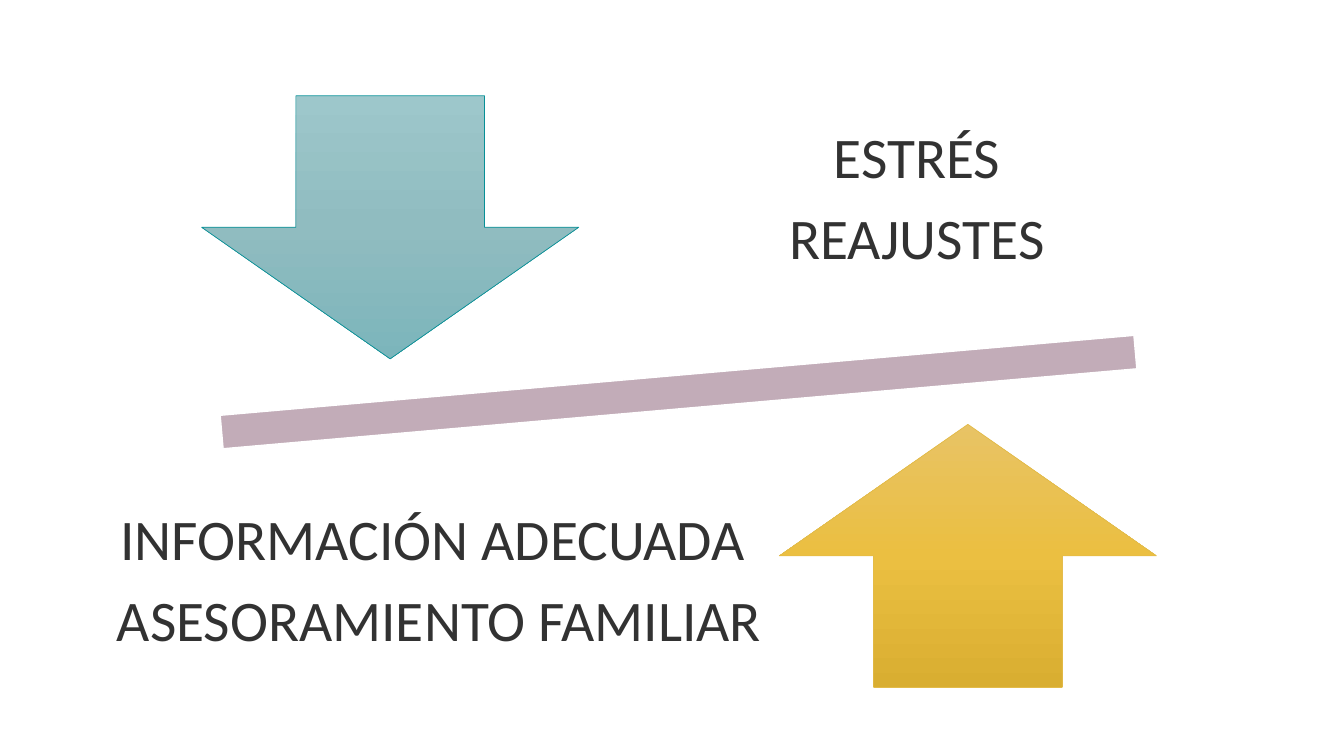
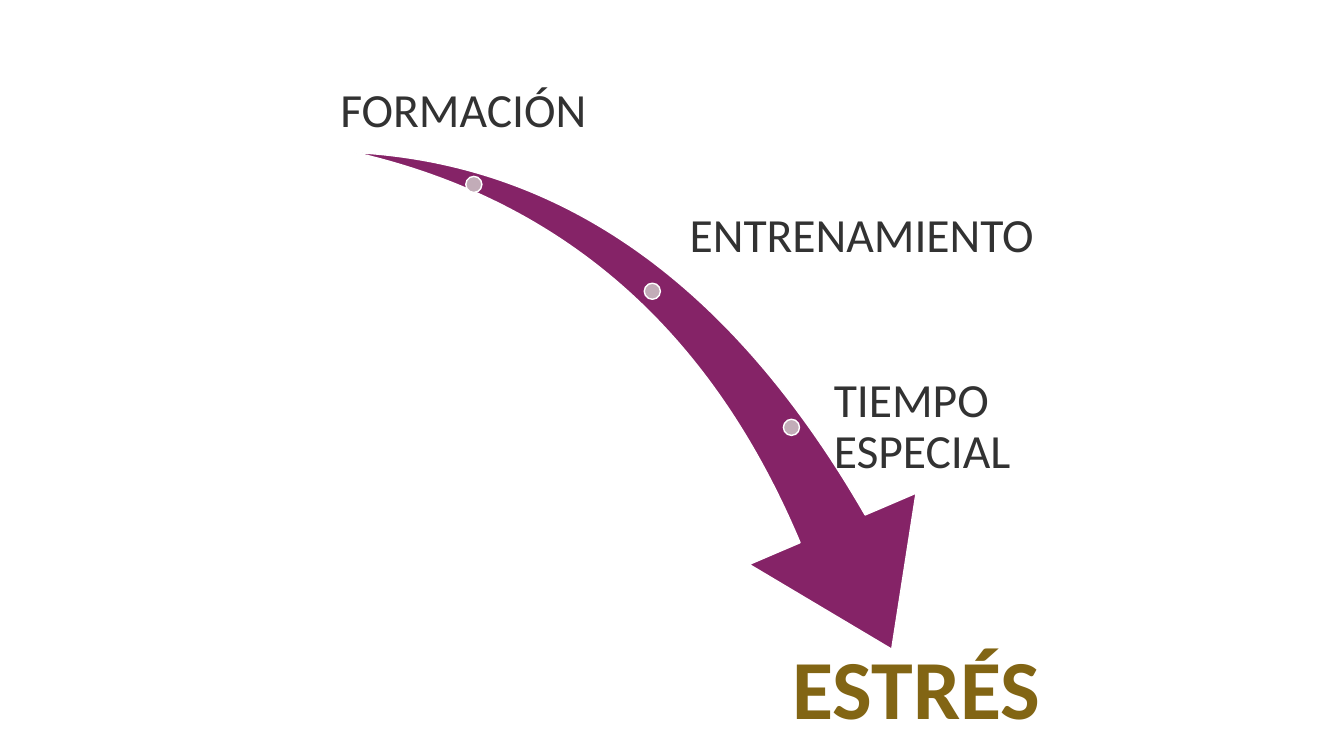
from copy import deepcopy
from pptx import Presentation, util as u
from pptx.dml.color import RGBColor
from pptx.enum import shapes, text

COLORS = {
    "ink": "323232", "white": "FFFFFF", "mauve": "C2ACB8", "plum": "852367",
    "olive": "826514", "teal_edge": "079097", "gold_edge": "E3BB49",
}
TEAL_FADE = ["9DC7CB", "90BCC0", "7CB5BB"]
GOLD_FADE = ["E8C365", "EBBF41", "D9AE31"]
FONT = "Calibri"
SHAPE = shapes.MSO_SHAPE
LEFT, CENTER = text.PP_ALIGN.LEFT, text.PP_ALIGN.CENTER
ANCHOR = text.MSO_ANCHOR


def rgb(name):
    return RGBColor.from_string(COLORS.get(name, name))


def place(origin, left, top, width, height):
    """Turn a box relative to origin into slide lengths."""
    return [u.Inches(value) for value in
            (origin[0] + left, origin[1] + top, width, height)]


def add_figure(slide, kind, box, fill, edge="white", weight=1, turn=0):
    figure = slide.shapes.add_shape(kind, *box)
    figure.shadow.inherit = False
    figure.rotation = turn
    figure.line.color.rgb = rgb(edge)
    figure.line.width = u.Pt(weight)
    if isinstance(fill, list):
        fade_down(figure, fill)
    else:
        figure.fill.solid()
        figure.fill.fore_color.rgb = rgb(fill)
    return figure


def fade_down(figure, tones):
    """Fill with three evenly spaced tones from top to bottom."""
    figure.fill.gradient()
    figure.fill.gradient_angle = 270
    stops = figure.fill.gradient_stops
    first = figure._element.spPr.gradFill.gsLst[0]
    first.addnext(deepcopy(first))
    stops = figure.fill.gradient_stops
    for index, (stop, tone) in enumerate(zip(stops, tones)):
        stop.position = index / 2
        stop.color.rgb = rgb(tone)


def add_label(slide, box, lines, size, inset, align=CENTER,
              anchor=ANCHOR.MIDDLE, color="ink", bold=False):
    frame = slide.shapes.add_textbox(*box).text_frame
    frame.word_wrap = True
    frame.vertical_anchor = anchor
    frame.margin_left = frame.margin_right = u.Inches(inset)
    frame.margin_top = frame.margin_bottom = u.Inches(inset)
    for index, line in enumerate(lines):
        para = frame.add_paragraph() if index else frame.paragraphs[0]
        para.alignment = align
        para.line_spacing = 0.9
        para.space_after = u.Pt(round(size * 0.35))
        span = para.add_run()
        span.text = line
        span.font.name = FONT
        span.font.size = u.Pt(size)
        span.font.bold = bold
        span.font.color.rgb = rgb(color)


def balance_slide(slide, origin):
    """Two opposed arrows on either side of a tilted beam."""
    # Beam
    add_figure(slide, SHAPE.MATH_MINUS, place(origin, 0, 2.56, 12.38, 1.42),
               "mauve", turn=355)
    # Falling side
    add_figure(slide, SHAPE.DOWN_ARROW, place(origin, 1.46, 0.33, 3.74, 2.61),
               TEAL_FADE, "teal_edge", 0.5)
    add_label(slide, place(origin, 6.56, 0, 3.99, 2.74),
              ["ESTRÉS", "REAJUSTES"], 41, 0.32)
    # Rising side
    add_figure(slide, SHAPE.UP_ARROW, place(origin, 7.19, 3.59, 3.74, 2.61),
               GOLD_FADE, "gold_edge", 0.5)
    add_label(slide, place(origin, 0.29, 3.79, 7.06, 2.74),
              ["INFORMACIÓN ADECUADA ", "ASESORAMIENTO FAMILIAR"], 41, 0.32)


def descent_slide(slide, origin):
    """Curved arrow with three steps leading down to the outcome."""
    # Curved arrow
    swoosh = add_figure(slide, SHAPE.SWOOSH_ARROW,
                        place(origin, 1.18, 1.44, 6.25, 4.36),
                        "plum", turn=73.3)
    swoosh.adjustments[0] = 0.16
    swoosh.adjustments[1] = 0.31
    # Steps: dot position, label box, text, alignment, anchor
    steps = [
        ((2.42, 1.49), (0, 0, 4.79, 1.16), "FORMACIÓN", CENTER, ANCHOR.BOTTOM),
        ((4.19, 2.55), (4.59, 1.51, 4.3, 1.16), "ENTRENAMIENTO", LEFT, ANCHOR.MIDDLE),
        ((5.57, 3.9), (6.02, 3.4, 3.1, 1.16), "TIEMPO ESPECIAL", LEFT, ANCHOR.MIDDLE),
    ]
    for dot, box, label, align, anchor in steps:
        add_figure(slide, SHAPE.OVAL, place(origin, *dot, 0.16, 0.16), "mauve")
        add_label(slide, place(origin, *box), [label], 34, 0.05, align, anchor)
    # Outcome
    add_label(slide, place(origin, 4.9, 6.08, 3.98, 1.16), ["ESTRÉS"], 60, 0.08,
              anchor=ANCHOR.TOP, color="olive", bold=True)


def main():
    deck = Presentation()
    deck.slide_width, deck.slide_height = u.Inches(13.33), u.Inches(7.5)
    pages = [(balance_slide, (0.54, 0.62)), (descent_slide, (2.2, 0.26))]
    for build, origin in pages:
        page = deck.slides.add_slide(deck.slide_layouts[6])
        page.background.fill.solid()
        page.background.fill.fore_color.rgb = rgb("white")
        build(page, origin)
    deck.save("out.pptx")


if __name__ == "__main__":
    main()
